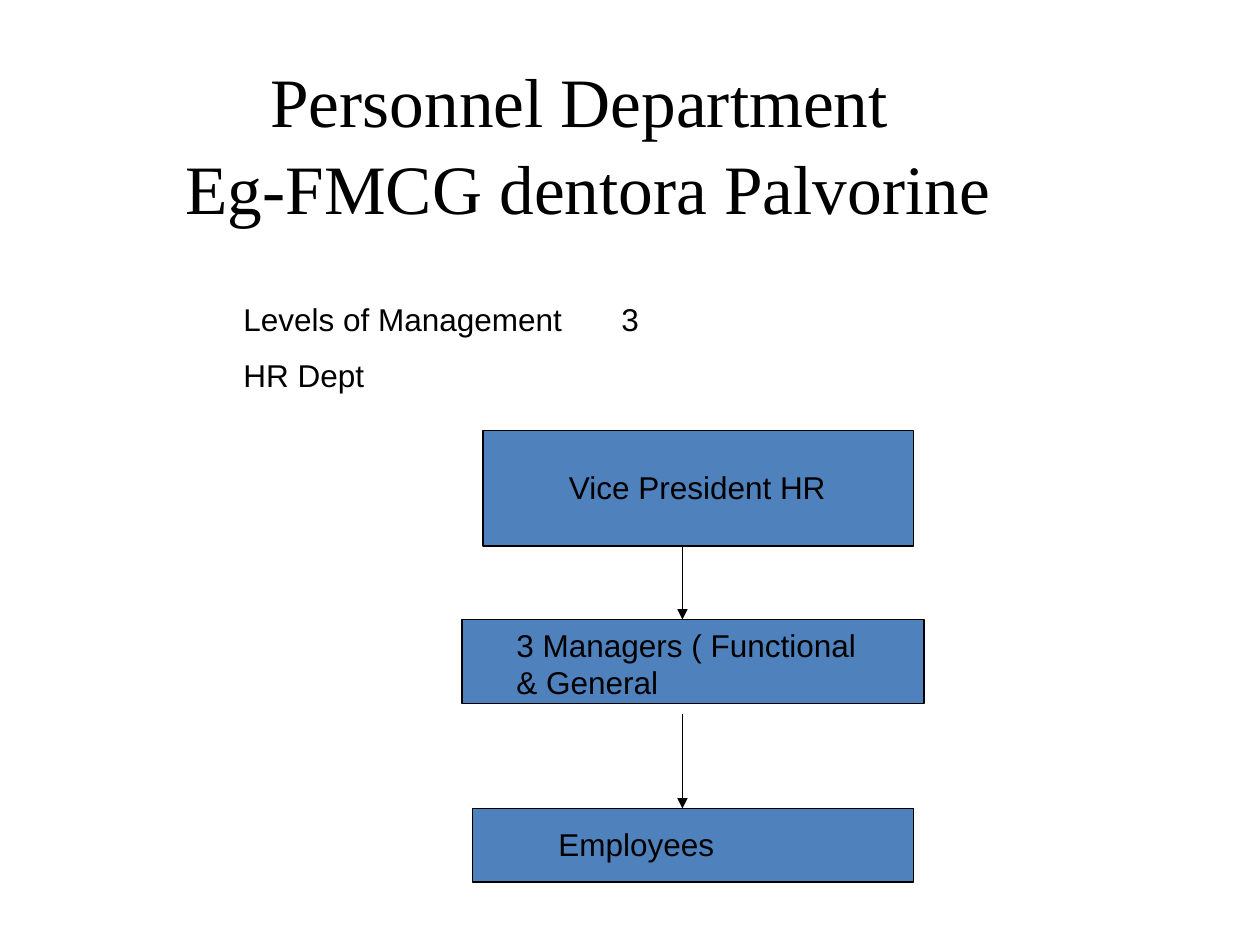
from pptx import Presentation
from pptx import util as u
from pptx.dml.color import RGBColor
from pptx.enum import shapes, text
from pptx.oxml.ns import qn
from lxml import etree

PX = 9525  # EMU in one px, 96 px to the inch
HUES = {"ink": "000000", "box": "4F81BD", "page": "FFFFFF"}


def hue(name):
    return RGBColor.from_string(HUES[name])


def px(*vals):
    return [u.Emu(v * PX) for v in vals]


class Deck:
    """Holds the style and the current slide."""
    size = 18
    face = "Arial"

    def __init__(self, wide, high):
        self.prs = Presentation()
        self.prs.slide_width, self.prs.slide_height = px(wide, high)
        self.slide = self.prs.slides.add_slide(self.prs.slide_layouts[5])
        fill = self.slide.background.fill
        fill.solid()
        fill.fore_color.rgb = hue("page")

    def font(self, para, face, size):
        para.font.name = face
        para.font.size = u.Pt(size)
        para.font.color.rgb = hue("ink")

    def title(self, words, *area):
        head = self.slide.shapes.title
        head.left, head.top, head.width, head.height = px(*area)
        frame = head.text_frame
        frame.text = words
        frame.word_wrap = True
        frame.auto_size = text.MSO_AUTO_SIZE.NONE
        frame.vertical_anchor = text.MSO_ANCHOR.MIDDLE
        frame.margin_bottom = px(56)[0]  # lifts the two lines
        para = frame.paragraphs[0]
        para.alignment = text.PP_ALIGN.CENTER
        para.line_spacing = 1.04
        self.font(para, "Times New Roman", 39.6)

    def text(self, lines, *area):
        frame = self.slide.shapes.add_textbox(*px(*area)).text_frame
        frame.word_wrap = True
        frame.text = "\n".join(lines)
        for i, para in enumerate(frame.paragraphs):
            if i:
                para.space_before = u.Pt(10)
            self.font(para, self.face, self.size)

    def box(self, *area):
        rect = self.slide.shapes.add_shape(
            shapes.MSO_SHAPE.RECTANGLE, *px(*area))
        rect.shadow.inherit = False
        rect.fill.solid()
        rect.fill.fore_color.rgb = hue("box")
        self.edge(rect.line)

    def edge(self, line):
        line.color.rgb = hue("ink")
        line.width = u.Pt(0.75)

    def arrow(self, x, top, end):
        link = self.slide.shapes.add_connector(
            shapes.MSO_CONNECTOR.STRAIGHT, *px(x, top, x, end))
        self.edge(link.line)
        etree.SubElement(link.line._get_or_add_ln(), qn("a:tailEnd"),
                         type="triangle")
        etree.SubElement(link._element.spPr, qn("a:effectLst"))


def main():
    deck = Deck(960, 720)

    # Heading and facts
    deck.title("Personnel Department \vEg-FMCG dentora Palvorine",
               40, 56, 816, 155)
    deck.text(["Levels of Management \t3", "HR Dept"], 176, 224, 664, 169)

    # Chain of command: box area, label, label area
    ranks = [
        ((368, 328, 328, 88), "Vice President HR", (424, 352, 216, 38)),
        ((352, 472, 352, 64), "3 Managers ( Functional & General",
         (384, 472, 296, 67)),
        ((360, 616, 336, 56), "Employees", (416, 624, 176, 38)),
    ]
    for area, label, spot in ranks:
        deck.box(*area)
        deck.text([label], *spot)

    # Arrows between the ranks
    for top, end in ((416, 472), (544, 616)):
        deck.arrow(520, top, end)

    deck.prs.save("out.pptx")


if __name__ == "__main__":
    main()
